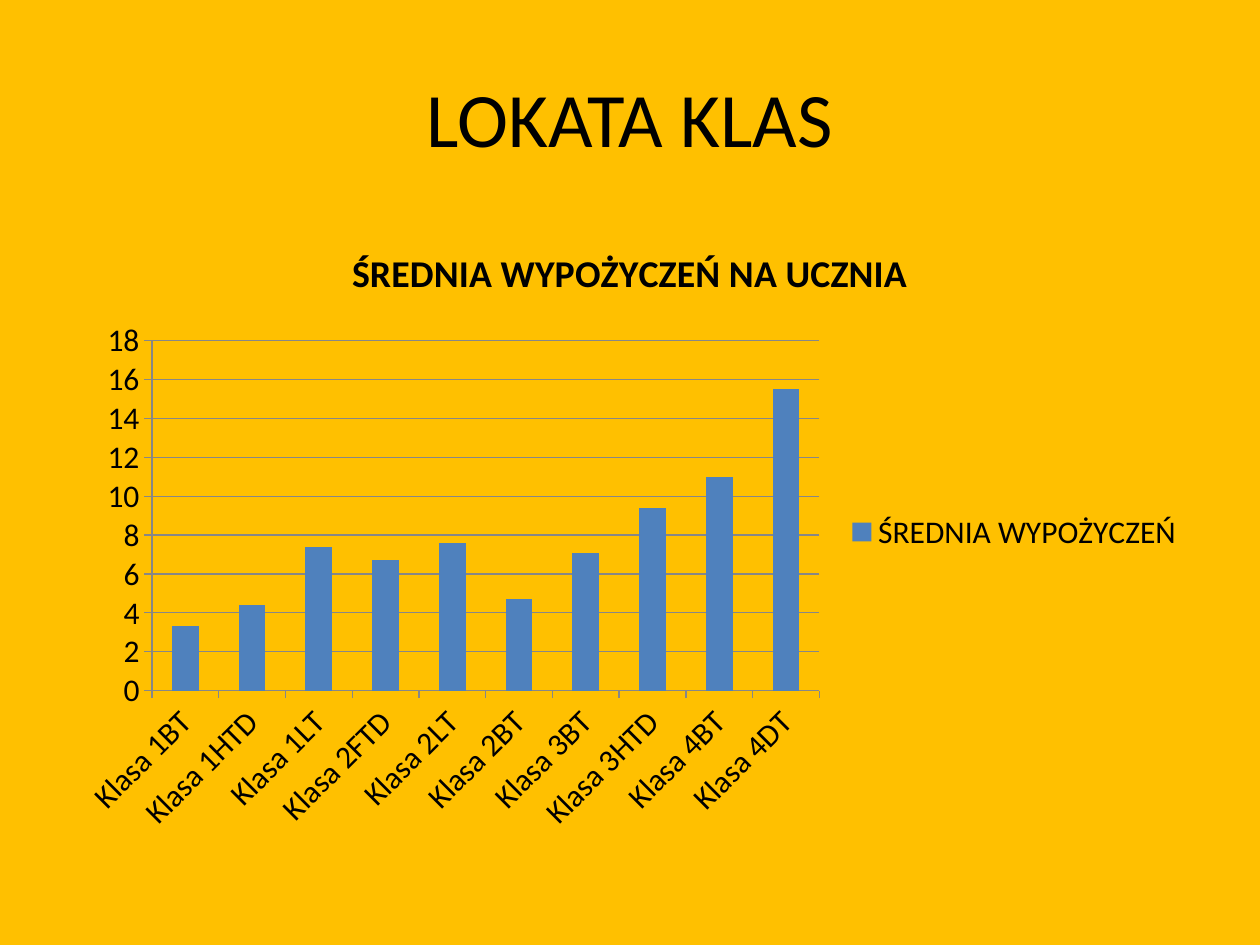
from pptx import Presentation
from pptx.chart.data import CategoryChartData
from pptx.dml.color import RGBColor
from pptx.enum.chart import XL_CHART_TYPE, XL_LEGEND_POSITION, XL_TICK_MARK
from pptx.enum.text import MSO_ANCHOR, PP_ALIGN
from pptx.util import Pt

COLUMNS = XL_CHART_TYPE.COLUMN_CLUSTERED
RIGHT = XL_LEGEND_POSITION.RIGHT
OUTSIDE = XL_TICK_MARK.OUTSIDE
MIDDLE = MSO_ANCHOR.MIDDLE
CENTER = PP_ALIGN.CENTER

TITLE = "LOKATA KLAS"
CHART_TITLE = "ŚREDNIA WYPOŻYCZEŃ NA UCZNIA"
SERIES_NAME = "ŚREDNIA WYPOŻYCZEŃ"
LOANS = {
    "Klasa 1BT": 3.3,
    "Klasa 1HTD": 4.4,
    "Klasa 1LT": 7.4,
    "Klasa 2FTD": 6.7,
    "Klasa 2LT": 7.6,
    "Klasa 2BT": 4.7,
    "Klasa 3BT": 7.1,
    "Klasa 3HTD": 9.4,
    "Klasa 4BT": 11,
    "Klasa 4DT": 15.5,
}

FONT = "Calibri"
BACKGROUND = RGBColor(0xFF, 0xC0, 0x00)
BLACK = RGBColor(0x00, 0x00, 0x00)
BLUE = RGBColor(0x4F, 0x81, 0xBD)
GRAY = RGBColor(0x87, 0x87, 0x87)

PX = 914400 // 126
SLIDE_W, SLIDE_H = 1260, 945
MARGIN = 63
CONTENT_W = SLIDE_W - 2 * MARGIN
TITLE_TOP, TITLE_H = 38, 157
CHART_TOP, CHART_H = 220, 624


def style_font(font, size, bold=False):
    font.name = FONT
    font.size = Pt(size)
    font.bold = bold
    font.color.rgb = BLACK


def add_title(slide):
    title = slide.shapes.title
    title.left, title.top = MARGIN * PX, TITLE_TOP * PX
    title.width, title.height = CONTENT_W * PX, TITLE_H * PX
    tf = title.text_frame
    tf.vertical_anchor = MIDDLE
    p = tf.paragraphs[0]
    p.alignment = CENTER
    r = p.add_run()
    r.text = TITLE
    style_font(r.font, 44)


def add_loans_chart(slide):
    data = CategoryChartData()
    data.categories = list(LOANS)
    data.add_series(SERIES_NAME, list(LOANS.values()))
    chart = slide.shapes.add_chart(
        COLUMNS, MARGIN * PX, CHART_TOP * PX, CONTENT_W * PX, CHART_H * PX, data
    ).chart
    style_font(chart.font, 18)

    chart.has_title = True
    r = chart.chart_title.text_frame.paragraphs[0].add_run()
    r.text = CHART_TITLE
    style_font(r.font, 21.6, bold=True)
    chart.chart_title.include_in_layout = False

    chart.has_legend = True
    chart.legend.position = RIGHT
    chart.legend.include_in_layout = False

    plot = chart.plots[0]
    plot.gap_width = 150
    plot.vary_by_categories = False
    fill = plot.series[0].format.fill
    fill.solid()
    fill.fore_color.rgb = BLUE

    values = chart.value_axis
    values.minimum_scale, values.maximum_scale, values.major_unit = 0, 18, 2
    values.has_major_gridlines = True
    for axis in (chart.category_axis, values):
        axis.major_tick_mark = OUTSIDE
    for part in (chart.category_axis, values, values.major_gridlines):
        part.format.line.color.rgb = GRAY
        part.format.line.width = Pt(0.75)


def main():
    prs = Presentation()
    prs.slide_width, prs.slide_height = SLIDE_W * PX, SLIDE_H * PX
    title_only = prs.slide_layouts[5]
    slide = prs.slides.add_slide(title_only)
    fill = slide.background.fill
    fill.solid()
    fill.fore_color.rgb = BACKGROUND
    add_title(slide)
    add_loans_chart(slide)
    prs.save("out.pptx")


if __name__ == "__main__":
    main()
